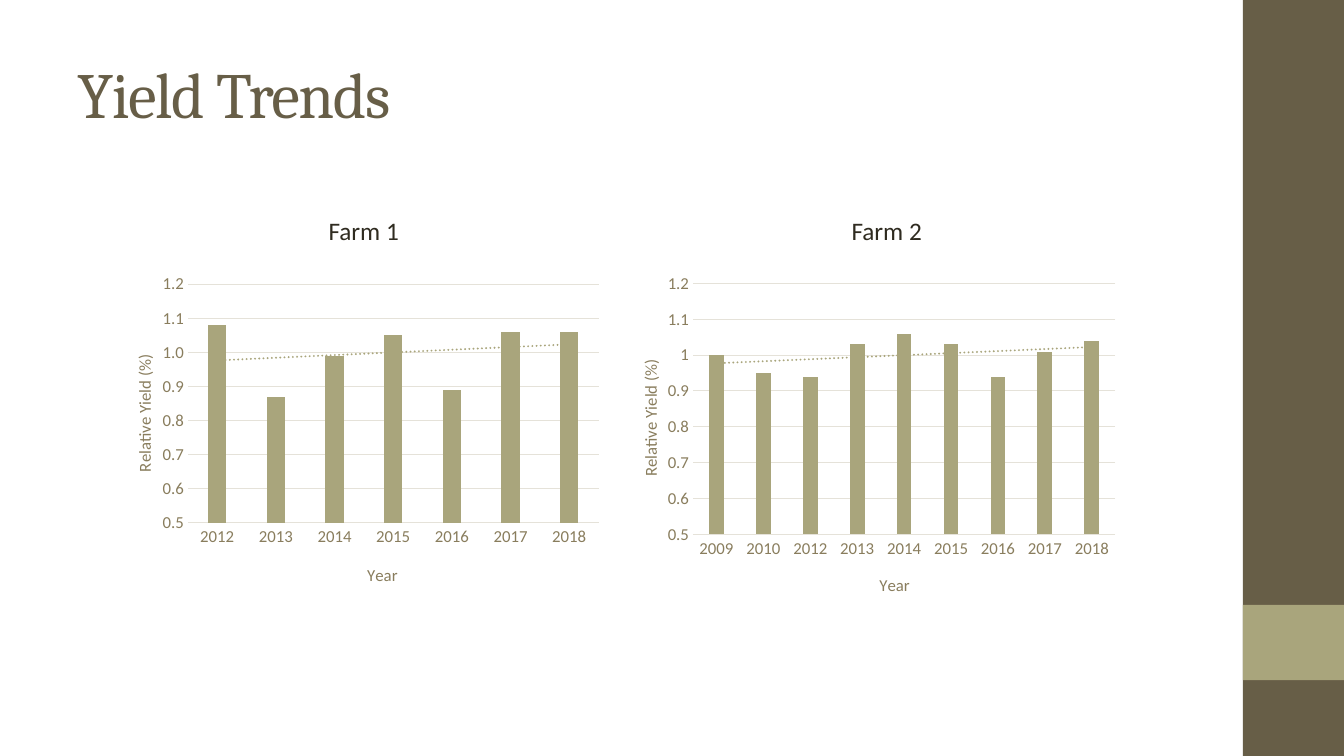
from lxml import etree
from pptx import Presentation
from pptx.chart.data import CategoryChartData
from pptx.dml.color import RGBColor
from pptx.enum.chart import XL_CHART_TYPE, XL_TICK_MARK
from pptx.enum.shapes import MSO_SHAPE
from pptx.enum.text import MSO_ANCHOR
from pptx.oxml import parse_xml
from pptx.oxml.ns import nsdecls, qn
from pptx.util import Cm, Pt

COLUMN = XL_CHART_TYPE.COLUMN_CLUSTERED
NO_TICK = XL_TICK_MARK.NONE
RECT = MSO_SHAPE.RECTANGLE
MIDDLE, TOP = MSO_ANCHOR.MIDDLE, MSO_ANCHOR.TOP

BROWN = RGBColor(0x67, 0x5E, 0x47)
SAGE = RGBColor(0xA9, 0xA5, 0x7C)
INK = RGBColor(0x2F, 0x2B, 0x20)
AXIS = RGBColor(0x89, 0x7D, 0x5D)
GRID = RGBColor(0xE5, 0xE2, 0xD9)

HEADING = {"name": "Cambria", "size": Pt(46)}
LABEL = {"name": "Calibri", "size": Pt(18)}
CHART_TEXT = {"name": "Calibri", "size": Pt(12), "bold": False}

FARMS = [
    {
        "name": "Farm 1", "left": 2.64, "label_left": 8.03, "format": "0.0",
        "yields": {"2012": 1.08, "2013": 0.87, "2014": 0.99, "2015": 1.05,
                   "2016": 0.89, "2017": 1.06, "2018": 1.06},
        "plot": {"x": 0.165, "y": 0.048, "w": 0.815, "h": 0.718},
        "year": {"x": 0.515, "y": 0.88}, "yield": {"x": 0.05, "y": 0.25},
    },
    {
        "name": "Farm 2", "left": 15.8, "label_left": 21.21, "format": "General",
        "yields": {"2009": 1, "2010": 0.95, "2012": 0.94, "2013": 1.03,
                   "2014": 1.06, "2015": 1.03, "2016": 0.94, "2017": 1.01,
                   "2018": 1.04},
        "plot": {"x": 0.131, "y": 0.046, "w": 0.838, "h": 0.759},
        "year": {"x": 0.495, "y": 0.915}, "yield": {"x": 0.018, "y": 0.268},
    },
]


def style_font(font, values, color):
    """Apply a dict of format values and a colour to a font."""
    for key, value in values.items():
        setattr(font, key, value)
    font.color.rgb = color


def add_band(slide, top, height, color):
    """Add a block of the right-hand side bar."""
    sp = slide.shapes.add_shape(RECT, Cm(31.32), Cm(top), Cm(2.55), Cm(height))
    sp.shadow.inherit = False
    sp.fill.solid()
    sp.fill.fore_color.rgb = color
    sp.line.fill.background()


def add_text(slide, text, box, values, color, anchor=TOP):
    """Add a one-line text box and return its run."""
    tf = slide.shapes.add_textbox(*[Cm(v) for v in box]).text_frame
    tf.word_wrap = True
    tf.vertical_anchor = anchor
    r = tf.paragraphs[0].add_run()
    r.text = text
    style_font(r.font, values, color)
    return r


def set_layout(parent, index, place, inner=False):
    """Give a chart part a manual layout in fractions of the chart."""
    for old in parent.findall(qn("c:layout")):
        parent.remove(old)
    layout = etree.Element(qn("c:layout"))
    manual = etree.SubElement(layout, qn("c:manualLayout"))
    values = [("layoutTarget", "inner")] if inner else []
    values += [("xMode", "edge"), ("yMode", "edge"), *place.items()]
    for tag, value in values:
        etree.SubElement(manual, qn(f"c:{tag}")).set("val", str(value))
    parent.insert(index, layout)


def format_axis(axis, title):
    """Title an axis and set its text and tick marks."""
    axis.major_tick_mark = axis.minor_tick_mark = NO_TICK
    style_font(axis.tick_labels.font, CHART_TEXT, AXIS)
    r = axis.axis_title.text_frame.paragraphs[0].add_run()
    r.text = title
    style_font(r.font, CHART_TEXT, AXIS)


def add_trend(ser):
    """Add a dotted linear trend line to a series element."""
    ser.find(qn("c:cat")).addprevious(parse_xml(
        f'<c:trendline {nsdecls("c", "a")}><c:spPr><a:ln w="19050" cap="rnd">'
        f'<a:solidFill><a:srgbClr val="{SAGE}"/></a:solidFill>'
        '<a:prstDash val="sysDot"/></a:ln></c:spPr>'
        '<c:trendlineType val="linear"/><c:dispRSqr val="0"/>'
        '<c:dispEq val="0"/></c:trendline>'))


def add_yield_chart(slide, farm):
    """Add the column chart of one farm's relative yield."""
    data = CategoryChartData()
    data.categories = list(farm["yields"])
    data.add_series("Series 1", list(farm["yields"].values()))
    chart = slide.shapes.add_chart(
        COLUMN, Cm(farm["left"]), Cm(6.76), Cm(12.7), Cm(8.38), data).chart
    style_font(chart.font, CHART_TEXT, INK)
    chart.has_legend = chart.has_title = False

    plot = chart.plots[0]
    plot.vary_by_categories = False
    plot.gap_width, plot.overlap = 219, -27
    fill = plot.series[0].format.fill
    fill.solid()
    fill.fore_color.rgb = SAGE

    years, yields = chart.category_axis, chart.value_axis
    format_axis(years, "Year")
    format_axis(yields, "Relative Yield (%)")
    yields.minimum_scale, yields.maximum_scale, yields.major_unit = 0.5, 1.2, 0.1
    yields.tick_labels.number_format = farm["format"]
    yields.tick_labels.number_format_is_linked = False
    yields.format.line.fill.background()
    for line in (years.format.line, yields.major_gridlines.format.line):
        line.color.rgb = GRID
        line.width = Pt(0.75)

    area = chart.element.find(".//" + qn("c:plotArea"))
    set_layout(area, 0, farm["plot"], inner=True)
    for tag, key in (("c:catAx", "year"), ("c:valAx", "yield")):
        set_layout(area.find(f"{qn(tag)}/{qn('c:title')}"), 1, farm[key])
    body = area.find(f"{qn('c:valAx')}/{qn('c:title')}//{qn('a:bodyPr')}")
    body.set("rot", "-5400000")
    body.set("vert", "horz")
    add_trend(area.find(".//" + qn("c:ser")))


def main():
    """Build the yield trends slide."""
    prs = Presentation()
    prs.slide_width, prs.slide_height = Cm(33.87), Cm(19.05)
    slide = prs.slides.add_slide(prs.slide_layouts[6])
    add_band(slide, 0, 19.05, BROWN)
    add_band(slide, 15.24, 1.9, SAGE)
    r = add_text(slide, "Yield Trends", (1.7, 0.76, 28.22, 3.18),
                 HEADING, BROWN, MIDDLE)
    r.font._element.set("spc", "-100")
    for farm in FARMS:
        add_yield_chart(slide, farm)
        add_text(slide, farm["name"], (farm["label_left"], 5.31, 6.3, 1.02),
                 LABEL, INK)
    prs.save("out.pptx")


if __name__ == "__main__":
    main()
